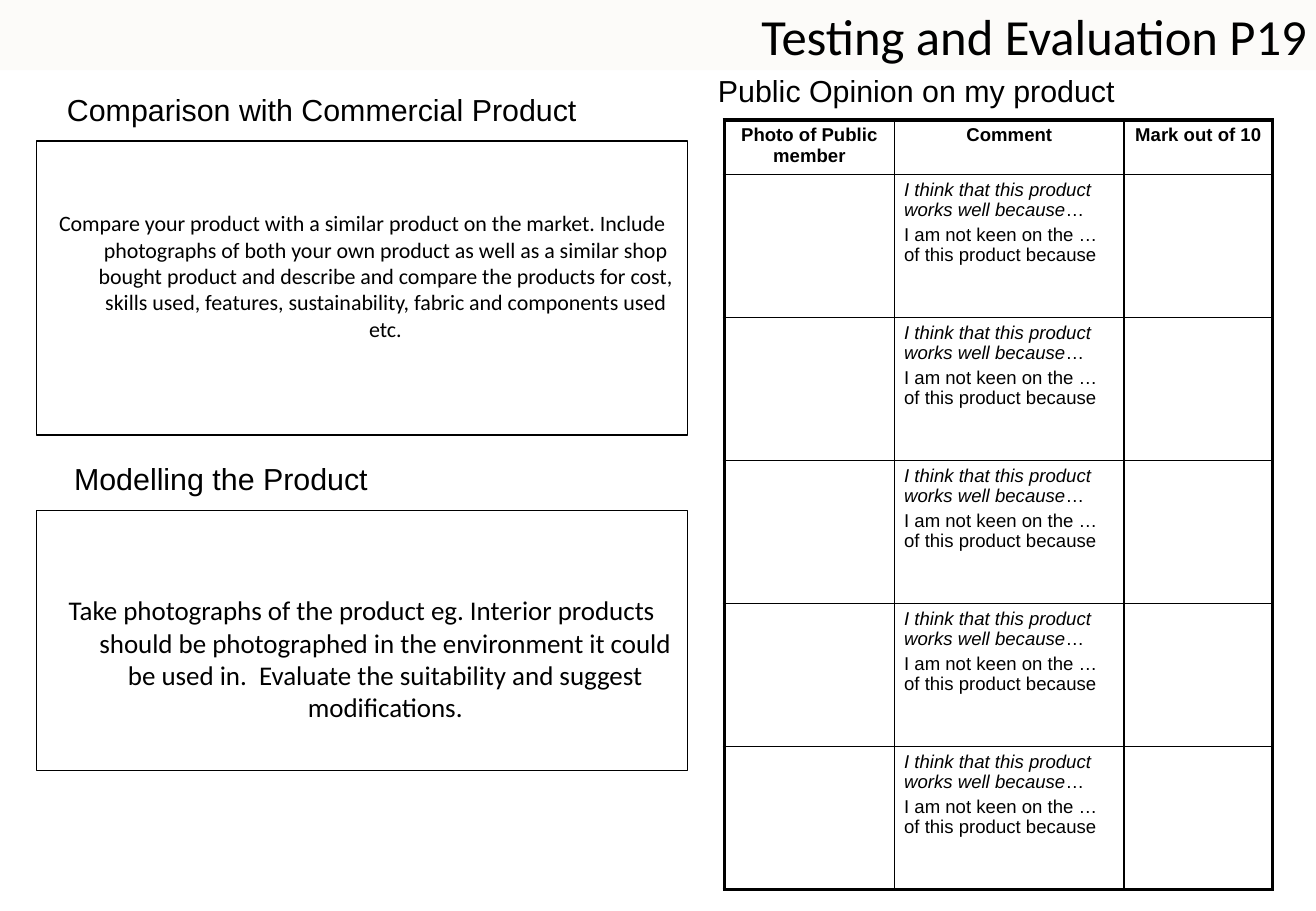
from lxml.etree import SubElement as Sub
from pptx import Presentation
from pptx.dml.color import RGBColor as RGB
from pptx.enum.shapes import MSO_SHAPE as Kind
from pptx.enum.text import PP_ALIGN as Align
from pptx.oxml.ns import qn
from pptx.util import Cm, Pt

HUES = {"ink": "000000", "band": "FCFBF9"}
THIN, THICK = 1, 2.25


class Sheet:
    """Holds the style and the current slide."""

    def __init__(self, wide, high):
        self.deck = Presentation()
        self.deck.slide_width, self.deck.slide_height = Cm(wide), Cm(high)
        self.slide = self.deck.slides.add_slide(self.deck.slide_layouts[6])
        self.shapes = self.slide.shapes

    def hue(self, name):
        return RGB.from_string(HUES[name])

    def style(self, para, size, face, align=Align.LEFT, bold=False):
        para.alignment = align
        for run in para.runs:
            font = run.font
            font.size, font.name, font.bold = Pt(size), face, bold
            font.color.rgb = self.hue("ink")

    def inset(self, item, side, top, low):
        item.margin_left = item.margin_right = Cm(side)
        item.margin_top, item.margin_bottom = Cm(top), Cm(low)

    def rect(self, x, y, w, h):
        box = self.shapes.add_shape(Kind.RECTANGLE, Cm(x), Cm(y), Cm(w), Cm(h))
        box.shadow.inherit = False
        box.text_frame.word_wrap = True
        return box

    def banner(self, text, w, h):
        box = self.rect(0, 0, w, h)
        box.fill.solid()
        box.fill.fore_color.rgb = self.hue("band")
        box.line.fill.background()
        self.inset(box.text_frame, 0.18, 0.1, 0.1)
        box.text_frame.text = text
        self.style(box.text_frame.paragraphs[0], 30, "Calibri", Align.RIGHT)

    def head(self, text, x, y):
        frame = self.shapes.add_textbox(Cm(x), Cm(y), Cm(12.7), Cm(0.84)).text_frame
        frame.word_wrap = True
        self.inset(frame, 0.18, 0.1, 0.1)
        frame.text = text
        self.style(frame.paragraphs[0], 18, "Arial")

    def panel(self, text, y, h, size, top):
        box = self.rect(0.76, y, 13.61, h)
        box.fill.background()
        box.line.color.rgb = self.hue("ink")
        box.line.width = Pt(0.75)
        frame = box.text_frame
        frame.vertical_anchor = 1  # top
        self.inset(frame, 0.25, top, 0.13)
        frame.text = text
        para = frame.paragraphs[0]
        self.style(para, size, "Calibri", Align.CENTER)
        # Hanging indent
        props = para._p.get_or_add_pPr()
        props.set("marL", str(Cm(0.98)))
        props.set("indent", str(-Cm(0.98)))

    def edges(self, cell, widths):
        props = cell._tc.get_or_add_tcPr()
        for side, width in zip("LRTB", widths):
            line = Sub(props, qn(f"a:ln{side}"), w=str(Pt(width)))
            fill = Sub(line, qn("a:solidFill"))
            Sub(fill, qn("a:srgbClr"), val=HUES["ink"])

    def table(self, x, y, cols, rows):
        grid = self.shapes.add_table(len(rows), len(cols), Cm(x), Cm(y),
                                     Cm(sum(cols)), Cm(sum(rows))).table
        grid.first_row = grid.horz_banding = False
        for col, wide in zip(grid.columns, cols):
            col.width = Cm(wide)
        for row, high in zip(grid.rows, rows):
            row.height = Cm(high)
        # Heavy frame outside, thin lines inside
        end, last = len(cols) - 1, len(rows) - 1
        for r, row in enumerate(grid.rows):
            for c, cell in enumerate(row.cells):
                outer = (c == 0, c == end, r == 0, r == last)
                self.edges(cell, [THICK if out else THIN for out in outer])
                cell.fill.background()
                self.inset(cell, 0.2, 0.1, 0.1)
        return grid

    def title(self, cell, text):
        cell.text_frame.text = text
        self.style(cell.text_frame.paragraphs[0], 11, "Arial", Align.CENTER, True)

    def remark(self, cell, like, moan):
        first = cell.text_frame.paragraphs[0]
        for text, slant in ((like, True), ("…", False)):
            run = first.add_run()
            run.text, run.font.italic = text, slant
        other = cell.text_frame.add_paragraph()
        other.text = moan
        other.space_before = Pt(2.2)
        for para in (first, other):
            self.style(para, 11, "Arial")


def main():
    sheet = Sheet(27.51, 19.05)

    # Title band
    sheet.banner("Testing and Evaluation P19", 27.51, 1.47)

    # Left column
    sheet.head("Comparison with Commercial Product", 1.22, 1.8)
    sheet.panel("Compare your product with a similar product on the market. "
                "Include photographs of both your own product as well as a "
                "similar shop bought product and describe and compare the "
                "products for cost, skills used, features, sustainability, "
                "fabric and components used etc.", 2.95, 6.15, 13, 1.44)
    sheet.head("Modelling the Product", 1.37, 9.53)
    sheet.panel("Take photographs of the product eg. Interior products should "
                "be photographed in the environment it could be used in.  "
                "Evaluate the suitability and suggest modifications.",
                10.67, 5.44, 16, 1.75)

    # Opinion table
    sheet.head("Public Opinion on my product", 14.83, 1.4)
    grid = sheet.table(15.14, 2.51, [3.56, 4.8, 3.1], [1.14] + [2.99] * 5)
    for c, text in enumerate(["Photo of Public member", "Comment", "Mark out of 10"]):
        sheet.title(grid.cell(0, c), text)
    for r in range(1, 6):
        sheet.remark(grid.cell(r, 1), "I think that this product works well because",
                     "I am not keen on the … of this product because")

    sheet.deck.save("out.pptx")


if __name__ == "__main__":
    main()
